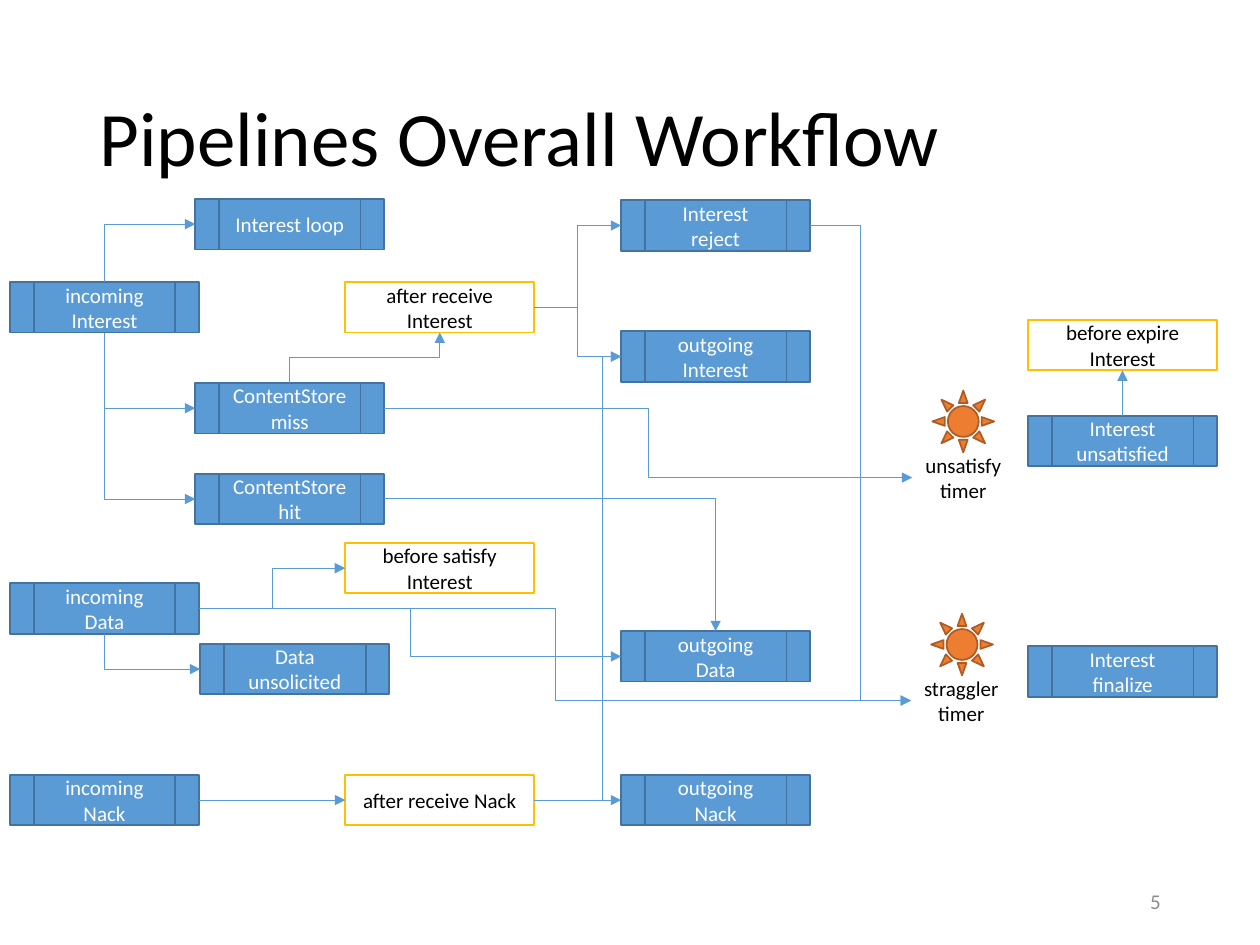
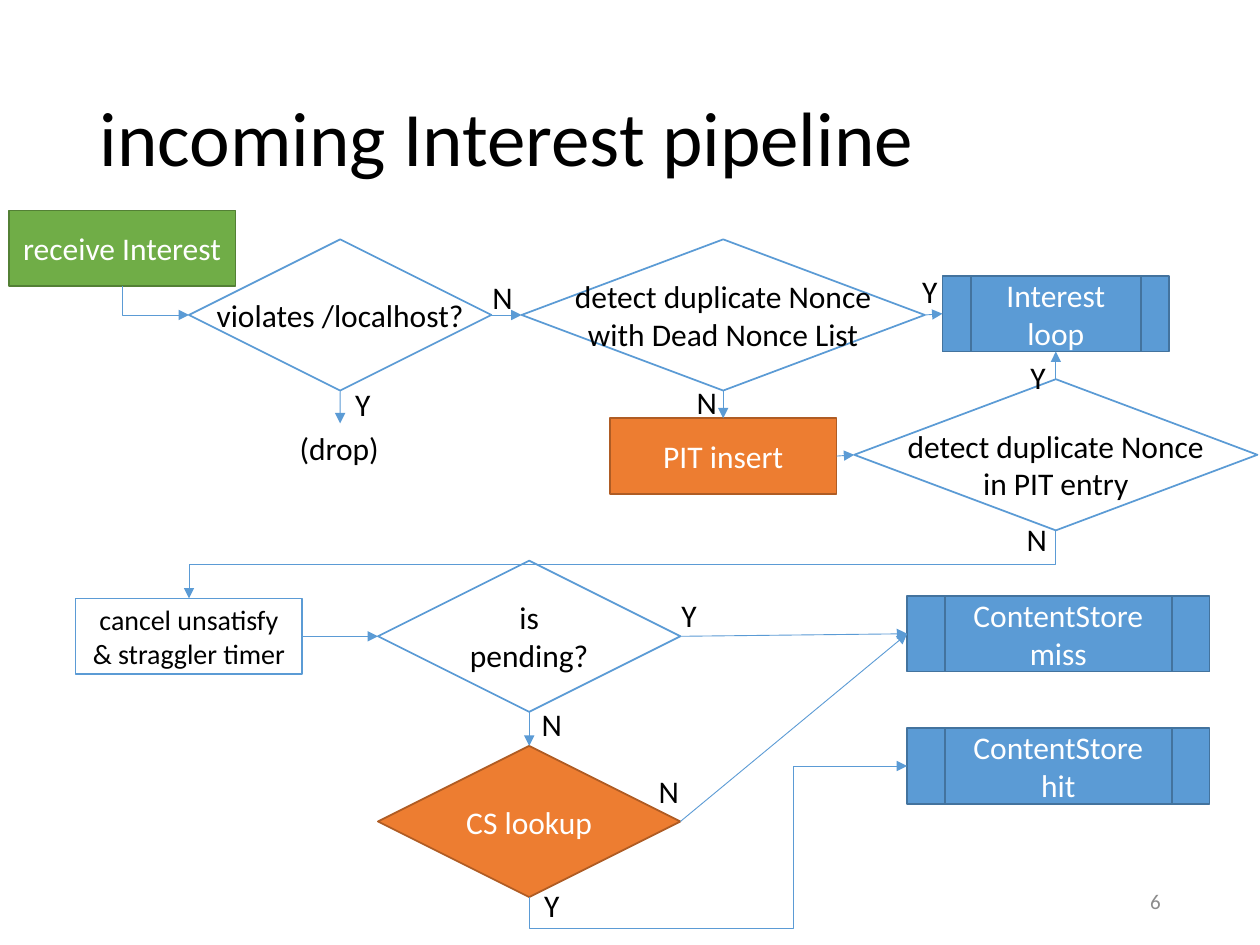
from dataclasses import dataclass

from lxml import etree
from pptx import Presentation
from pptx.dml.color import RGBColor
from pptx.enum import shapes, text
from pptx.oxml import ns
from pptx.util import Inches, Pt

TOP, LEFT, BOTTOM, RIGHT = range(4)
PROCESS = shapes.MSO_SHAPE.FLOWCHART_PREDEFINED_PROCESS
DECISION = shapes.MSO_SHAPE.FLOWCHART_DECISION
RECTANGLE = shapes.MSO_SHAPE.RECTANGLE


@dataclass(frozen=True)
class Style:
    fill: str
    line: str
    ink: str


@dataclass(frozen=True)
class Theme:
    font: str = "Calibri"
    ink: str = "000000"
    number_ink: str = "8C8C8C"
    connector: str = "5B9BD5"
    pipeline: Style = Style("5B9BD5", "43739E", "FFFFFF")
    strategy: Style = Style("FFFFFF", "FFC000", "000000")
    step: Style = Style("FFFFFF", "5B9BD5", "000000")
    table: Style = Style("ED7D31", "AF5C24", "FFFFFF")
    entry: Style = Style("70AD47", "538035", "FFFFFF")
    title_size: int = 44
    flow_size: int = 18
    step_size: int = 16
    small_size: int = 12
    border: float = 1
    connector_width: float = 0.5


THEME = Theme()


def rgb(value):
    return RGBColor.from_string(value)


def write(frame, words, size, ink, align):
    para = frame.paragraphs[0]
    para.text = words
    para.alignment = align
    para.font.name = THEME.font
    para.font.size = Pt(size)
    para.font.color.rgb = rgb(ink)
    return para


def add_page(deck, title, number):
    page = deck.slides.add_slide(deck.slide_layouts[5])
    heading = page.shapes.title
    heading.left, heading.top = Inches(0.69), Inches(0.4)
    heading.width, heading.height = Inches(8.62), Inches(1.45)
    frame = heading.text_frame
    frame.vertical_anchor = text.MSO_ANCHOR.MIDDLE
    frame.auto_size = text.MSO_AUTO_SIZE.NONE
    para = write(frame, title, THEME.title_size, THEME.ink, text.PP_ALIGN.LEFT)
    para.line_spacing = 0.9
    footer = page.shapes.add_textbox(
        Inches(7.06), Inches(6.95), Inches(2.25), Inches(0.4)).text_frame
    footer.word_wrap = True
    footer.vertical_anchor = text.MSO_ANCHOR.MIDDLE
    write(footer, str(number), THEME.small_size, THEME.number_ink,
          text.PP_ALIGN.RIGHT)
    return page


def add_node(page, preset, left, top, width, height, style):
    node = page.shapes.add_shape(
        preset, Inches(left), Inches(top), Inches(width), Inches(height))
    node.shadow.inherit = False
    node.fill.solid()
    node.fill.fore_color.rgb = rgb(style.fill)
    node.line.color.rgb = rgb(style.line)
    node.line.width = Pt(THEME.border)
    return node


def add_box(page, preset, words, left, top, width, height, style, size,
            wrap=True):
    box = add_node(page, preset, left, top, width, height, style)
    box.text_frame.word_wrap = wrap
    box.text_frame.vertical_anchor = text.MSO_ANCHOR.MIDDLE
    write(box.text_frame, words, size, style.ink, text.PP_ALIGN.CENTER)
    return box


def add_label(page, words, left, top, width, height=0.4,
              size=THEME.flow_size, align=text.PP_ALIGN.LEFT):
    label = page.shapes.add_textbox(
        Inches(left), Inches(top), Inches(width), Inches(height))
    label.text_frame.word_wrap = False
    label.text_frame.auto_size = text.MSO_AUTO_SIZE.SHAPE_TO_FIT_TEXT
    write(label.text_frame, words, size, THEME.ink, align)
    return label


def add_timer(page, words, left, top, width):
    add_node(page, shapes.MSO_SHAPE.SUN, left + 0.16, top, 0.49, 0.49,
             THEME.table)
    return add_label(page, words, left, top + 0.44, width, 0.5,
                     THEME.small_size, text.PP_ALIGN.CENTER)


def join(page, kind, source, source_side, target, target_side):
    connector = page.shapes.add_connector(kind, 0, 0, 0, 0)
    connector.begin_connect(source, source_side)
    connector.end_connect(target, target_side)
    connector.line.color.rgb = rgb(THEME.connector)
    connector.line.width = Pt(THEME.connector_width)
    outline = connector.line._get_or_add_ln()
    etree.SubElement(outline, ns.qn("a:tailEnd"), type="triangle")
    etree.SubElement(connector._element.spPr, ns.qn("a:effectLst"))
    return connector


def add_arrow(page, source, source_side, target, target_side):
    join(page, shapes.MSO_CONNECTOR.STRAIGHT,
         source, source_side, target, target_side)


def add_elbow(page, source, source_side, target, target_side, bends=()):
    elbow = join(page, shapes.MSO_CONNECTOR.ELBOW,
                 source, source_side, target, target_side)
    if source_side in (TOP, BOTTOM):
        turn_upright(elbow)
    turns_corner = source_side % 2 != target_side % 2
    segments = 2 + len(bends) if turns_corner else 3
    geometry = elbow._element.spPr.find(ns.qn("a:prstGeom"))
    geometry.set("prst", f"bentConnector{segments}")
    guides = geometry.find(ns.qn("a:avLst"))
    for index, share in enumerate(bends, 1):
        etree.SubElement(guides, ns.qn("a:gd"), name=f"adj{index}",
                         fmla=f"val {round(share * 100000)}")


def turn_upright(elbow):
    across = elbow.end_x - elbow.begin_x
    down = elbow.end_y - elbow.begin_y
    middle_x = (elbow.begin_x + elbow.end_x) // 2
    middle_y = (elbow.begin_y + elbow.end_y) // 2
    elbow.begin_x, elbow.begin_y = middle_x - down // 2, middle_y + across // 2
    elbow.end_x, elbow.end_y = middle_x + down // 2, middle_y - across // 2
    elbow.rotation = 90


def build_overview(deck):
    page = add_page(deck, "Pipelines Overall Workflow", 5)
    incoming, inner, strategy, outgoing, final = 0.08, 1.55, 2.74, 4.93, 8.16
    pipelines = [
        ("incoming Interest", incoming, 2.24),
        ("incoming Data", incoming, 4.63),
        ("incoming Nack", incoming, 6.15),
        ("Interest loop", inner, 1.58),
        ("ContentStore miss", inner, 3.04),
        ("ContentStore hit", inner, 3.76),
        ("Data unsolicited", 1.59, 5.11),
        ("Interest reject", outgoing, 1.59),
        ("outgoing Interest", outgoing, 2.63),
        ("outgoing Data", outgoing, 5.01),
        ("outgoing Nack", outgoing, 6.15),
        ("Interest unsatisfied", final, 3.3),
        ("Interest finalize", final, 5.13),
    ]
    triggers = [
        ("after receive Interest", strategy, 2.24),
        ("before satisfy Interest", strategy, 4.31),
        ("after receive Nack", strategy, 6.15),
        ("before expire Interest", final, 2.54),
    ]
    nodes = {}
    for preset, style, group in ((PROCESS, THEME.pipeline, pipelines),
                                 (RECTANGLE, THEME.strategy, triggers)):
        for words, left, top in group:
            nodes[words] = add_box(page, preset, words, left, top, 1.5, 0.4,
                                   style, THEME.small_size)
    nodes["unsatisfy"] = add_timer(page, "unsatisfy\ntimer", 7.24, 3.1, 0.81)
    nodes["straggler"] = add_timer(page, "straggler\ntimer", 7.23, 4.87, 0.8)

    elbows = [
        ("incoming Interest", TOP, "Interest loop", LEFT),
        ("incoming Interest", BOTTOM, "ContentStore miss", LEFT),
        ("incoming Interest", BOTTOM, "ContentStore hit", LEFT),
        ("ContentStore miss", TOP, "after receive Interest", BOTTOM),
        ("ContentStore miss", RIGHT, "unsatisfy", LEFT),
        ("ContentStore hit", RIGHT, "outgoing Data", TOP),
        ("after receive Interest", RIGHT, "Interest reject", LEFT),
        ("after receive Interest", RIGHT, "outgoing Interest", LEFT),
        ("incoming Data", BOTTOM, "Data unsolicited", LEFT),
        ("incoming Data", RIGHT, "before satisfy Interest", LEFT),
        ("incoming Data", RIGHT, "outgoing Data", LEFT),
        ("incoming Data", RIGHT, "straggler", LEFT),
        ("Interest reject", RIGHT, "straggler", LEFT),
        ("Interest unsatisfied", TOP, "before expire Interest", BOTTOM),
        ("after receive Nack", RIGHT, "outgoing Interest", LEFT, (0.78,)),
    ]
    for source, source_side, target, target_side, *bends in elbows:
        add_elbow(page, nodes[source], source_side, nodes[target],
                  target_side, *bends)
    for source, target in (("incoming Nack", "after receive Nack"),
                           ("after receive Nack", "outgoing Nack")):
        add_arrow(page, nodes[source], RIGHT, nodes[target], LEFT)


def build_incoming_interest(deck):
    page = add_page(deck, "incoming Interest pipeline", 6)

    def step(words, left, top, style, size=THEME.flow_size):
        return add_box(page, RECTANGLE, words, left, top, 1.8, 0.6, style, size)

    def pipeline(words, left, top, width):
        return add_box(page, PROCESS, words, left, top, width, 0.6,
                       THEME.pipeline, THEME.flow_size)

    def decision(words, left, top, width, style=THEME.step, wrap=True):
        return add_box(page, DECISION, words, left, top, width, 1.2, style,
                       THEME.flow_size, wrap)

    receive = step("receive Interest", 0.07, 1.67, THEME.entry)
    localhost = decision("violates /localhost?", 1.5, 1.9, 2.4, wrap=False)
    dead_nonce = decision("detect duplicate Nonce\nwith Dead Nonce List",
                          4.14, 1.9, 3.2, wrap=False)
    pit_insert = step("PIT insert", 4.84, 3.32, THEME.table)
    pit_nonce = decision("detect duplicate Nonce\nin PIT entry",
                         6.78, 3.01, 3.2, wrap=False)
    pit_nonce.text_frame.margin_top = Inches(0.2)
    cancel = step("cancel unsatisfy & straggler timer", 0.6, 4.75, THEME.step,
                  THEME.step_size)
    pending = decision("is pending?", 3, 4.45, 2.4)
    lookup = decision("CS lookup", 3, 5.92, 2.4, THEME.table)
    loop = pipeline("Interest loop", 7.48, 2.19, 1.8)
    miss = pipeline("ContentStore miss", 7.2, 4.73, 2.4)
    hit = pipeline("ContentStore hit", 7.2, 5.78, 2.4)
    drop = add_label(page, "(drop)", 2.28, 3.36, 0.84)

    for source, source_side, target, target_side in (
            (localhost, RIGHT, dead_nonce, LEFT),
            (localhost, BOTTOM, drop, TOP),
            (dead_nonce, RIGHT, loop, LEFT),
            (dead_nonce, BOTTOM, pit_insert, TOP),
            (pit_insert, RIGHT, pit_nonce, LEFT),
            (pit_nonce, TOP, loop, BOTTOM),
            (cancel, RIGHT, pending, LEFT),
            (pending, RIGHT, miss, LEFT),
            (pending, BOTTOM, lookup, TOP),
            (lookup, RIGHT, miss, LEFT)):
        add_arrow(page, source, source_side, target, target_side)
    add_elbow(page, receive, BOTTOM, localhost, LEFT)
    add_elbow(page, pit_nonce, BOTTOM, cancel, TOP)
    add_elbow(page, lookup, BOTTOM, hit, LEFT, (-0.24, 0.7))

    answers = {
        "Y": (0.32, [(2.72, 3.01), (7.22, 2.11), (8.08, 2.79), (5.31, 4.68),
                     (4.22, 6.98)]),
        "N": (0.36, [(3.81, 2.16), (5.43, 2.99), (8.05, 4.08), (4.2, 5.55),
                     (5.13, 6.08)]),
    }
    for answer, (width, places) in answers.items():
        for left, top in places:
            add_label(page, answer, left, top, width)


def main():
    deck = Presentation()
    deck.slide_width, deck.slide_height = Inches(10), Inches(7.5)
    build_overview(deck)
    build_incoming_interest(deck)
    deck.save("out.pptx")


if __name__ == "__main__":
    main()
